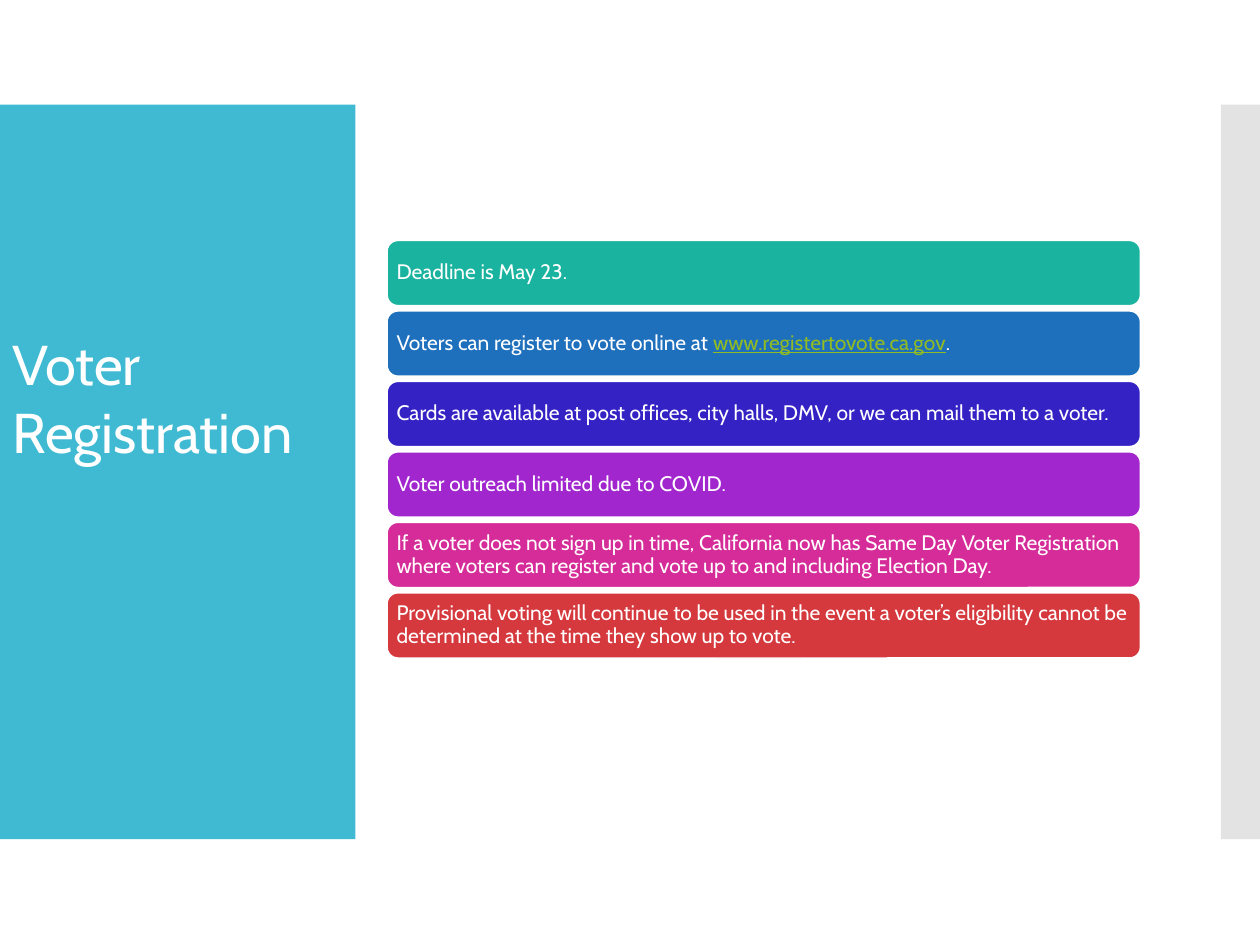
from dataclasses import dataclass

from lxml.etree import SubElement
from pptx import Presentation
from pptx.dml.color import RGBColor
from pptx.enum.shapes import MSO_SHAPE as Shape
from pptx.enum.text import MSO_ANCHOR as Anchor, PP_ALIGN as Align
from pptx.oxml.ns import qn
from pptx.util import Pt


@dataclass(frozen=True)
class Theme:
    """Colours, font and type sizes of the slide."""
    font: str = "Cabin"
    title_size: float = 32
    body_size: float = 12
    white: str = "FFFFFF"
    link: str = "90BB23"
    panel: str = "40BAD2"
    edge: str = "C8C8C8"
    cards: tuple = ("1AB39F", "1E6FBC", "3422C5", "A126CE", "D52C99", "D5393D")


THEME = Theme()
LINK = "www.registertovote.ca.gov"
FACTS = (
    ("Deadline is May 23.",),
    ("Voters can register to vote online at ", LINK, "."),
    ("Cards are available at post offices, city halls, DMV, or we can mail them to a voter.",),
    ("Voter outreach limited due to COVID.",),
    ("If a voter does not sign up in time, California now has Same Day Voter Registration "
     "where voters can register and vote up to and including Election Day.",),
    ("Provisional voting will continue to be used in the event a voter’s eligibility cannot be "
     "determined at the time they show up to vote.",),
)


def add_block(slide, preset, box, color):
    """Add a flat filled shape without outline or shadow."""
    block = slide.shapes.add_shape(preset, *map(Pt, box))
    block.shadow.inherit = False
    block.fill.solid()
    block.fill.fore_color.rgb = RGBColor.from_string(color)
    block.line.fill.background()
    return block


def add_run(paragraph, text, size, color=THEME.white):
    """Add one run in the theme font."""
    run = paragraph.add_run()
    run.text = text
    run.font.name = THEME.font
    run.font.size = Pt(size)
    run.font.color.rgb = RGBColor.from_string(color)
    return run


def add_title_panel(slide, box, title):
    """Draw the coloured panel with the slide title."""
    left, top, width, height = box
    add_block(slide, Shape.RECTANGLE, box, THEME.panel)
    heading = slide.shapes.add_textbox(Pt(left), Pt(top + 125.2), Pt(width - 3.6), Pt(85))
    heading.text_frame.word_wrap = True
    add_run(heading.text_frame.paragraphs[0], title, THEME.title_size)


def add_edge_strip(slide, box):
    """Draw the half-transparent strip at the slide edge."""
    strip = add_block(slide, Shape.RECTANGLE, box, THEME.edge)
    color = strip.fill._xPr.find(qn("a:solidFill"))[0]
    SubElement(color, qn("a:alpha"), val="50000")


def add_card(slide, box, color, pieces):
    """Draw one rounded card holding a fact."""
    card = add_block(slide, Shape.ROUNDED_RECTANGLE, box, color)
    card.line.color.rgb = RGBColor.from_string(THEME.white)
    card.line.width = Pt(0.85)
    frame = card.text_frame
    frame.word_wrap = True
    frame.vertical_anchor = Anchor.MIDDLE
    frame.margin_left = frame.margin_right = Pt(3.6)
    frame.margin_top = frame.margin_bottom = Pt(1.8)
    paragraph = frame.paragraphs[0]
    paragraph.alignment = Align.LEFT
    paragraph.line_spacing = 0.9
    for piece in pieces:
        if piece == LINK:
            add_run(paragraph, piece, THEME.body_size, THEME.link).font.underline = True
        else:
            add_run(paragraph, piece, THEME.body_size)


def add_fact_list(slide, box, facts, gap=3):
    """Stack the cards evenly in the box."""
    left, top, width, height = box
    card_height = (height - gap * (len(facts) - 1)) / len(facts)
    for row, (color, pieces) in enumerate(zip(THEME.cards, facts)):
        card_top = top + row * (card_height + gap)
        add_card(slide, (left, card_top, width, card_height), color, pieces)


def main():
    """Build and save the slide."""
    deck = Presentation()
    deck.slide_width, deck.slide_height = Pt(720), Pt(540)
    slide = deck.slides.add_slide(deck.slide_layouts[6])
    add_title_panel(slide, (0, 59.8, 203.2, 419.8), "Voter Registration")
    add_edge_strip(slide, (697.6, 59.8, 22.4, 419.8))
    add_fact_list(slide, (221.2, 137.4, 430.5, 238.6), FACTS)
    deck.save("out.pptx")


if __name__ == "__main__":
    main()
